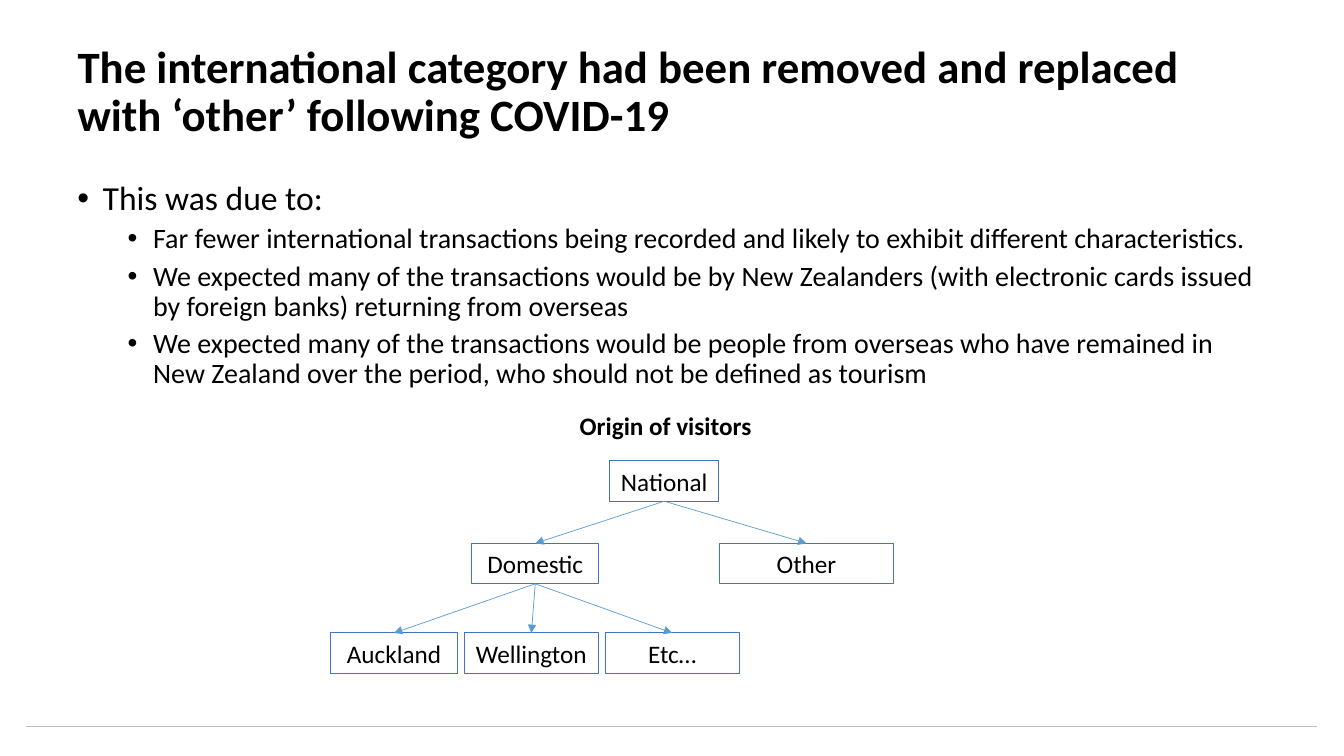
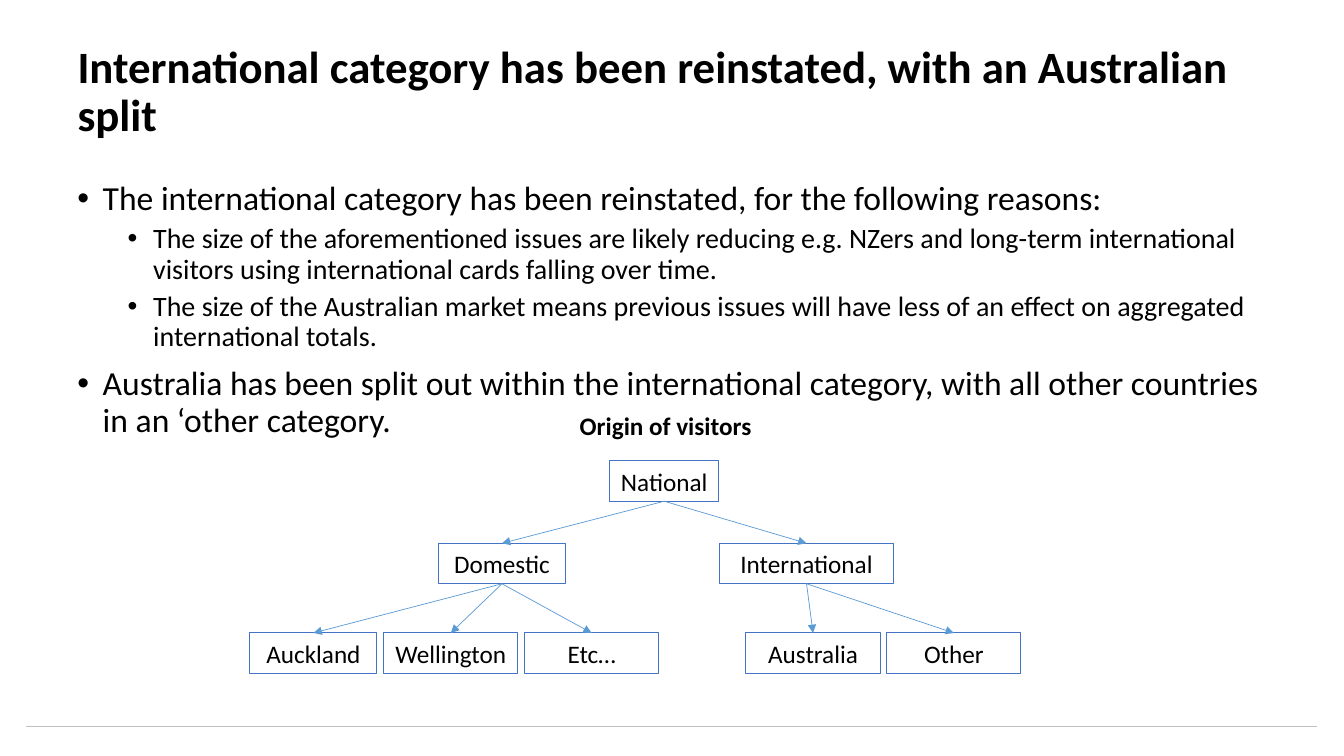
from dataclasses import dataclass

from lxml.etree import SubElement
from pptx import Presentation
from pptx.dml.color import RGBColor
from pptx.enum.shapes import MSO_CONNECTOR, MSO_SHAPE
from pptx.enum.text import MSO_ANCHOR, MSO_AUTO_SIZE, PP_ALIGN
from pptx.oxml.ns import qn
from pptx.util import Cm, Pt

BLACK = RGBColor(0x00, 0x00, 0x00)
GREY = RGBColor(0xBF, 0xBF, 0xBF)
BOX_BLUE = RGBColor(0x44, 0x72, 0xC4)
ARROW_BLUE = RGBColor(0x5B, 0x9B, 0xD5)
FONT = "Calibri"

# Lengths in centimetres
MARGIN, CONTENT_WIDTH = 1.7, 30.48
ROW_TOPS = (11.61, 13.69, 15.95)
BOX_HEIGHT = 1.02
SIBLING_GAP = 0.17
CITIES = (("Auckland", 3.2), ("Wellington", 3.38), ("Etc…", 3.38))
COUNTRIES = (("Australia", 3.38), ("Other", 3.38))


@dataclass(frozen=True)
class Node:
    label: str
    left: float
    width: float
    children: tuple["Node", ...] = ()


@dataclass(frozen=True)
class Bullet:
    text: str
    level: int = 0


@dataclass(frozen=True)
class BulletStyle:
    size: int
    indent: float
    space_before: int


@dataclass(frozen=True)
class Page:
    title: str
    bullets: tuple[Bullet, ...]
    tree: Node


BULLET_STYLES = (BulletStyle(24, 0.64, 10), BulletStyle(20, 1.91, 5))
HANGING = 0.64


def siblings(left: float, items: tuple[tuple[str, float], ...]) -> tuple[Node, ...]:
    """Lay out boxes side by side with equal gaps."""
    nodes = []
    for label, width in items:
        nodes.append(Node(label, left, width))
        left += width + SIBLING_GAP
    return tuple(nodes)


def visitor_tree(domestic_left: float, cities_left: float, abroad: str,
                 countries: tuple[Node, ...] = ()) -> Node:
    return Node("National", 15.37, 2.74, (
        Node("Domestic", domestic_left, 3.2, siblings(cities_left, CITIES)),
        Node(abroad, 18.14, 4.37, countries),
    ))


PAGES = (
    Page(
        "The international category had been removed and replaced with ‘other’ "
        "following COVID-19",
        (
            Bullet("This was due to:"),
            Bullet("Far fewer international transactions being recorded and likely to "
                   "exhibit different characteristics.", 1),
            Bullet("We expected many of the transactions would be by New Zealanders (with "
                   "electronic cards issued by foreign banks) returning from overseas", 1),
            Bullet("We expected many of the transactions would be people from overseas who "
                   "have remained in New Zealand over the period, who should not be "
                   "defined as tourism", 1),
        ),
        visitor_tree(11.89, 8.33, "Other"),
    ),
    Page(
        "International category has been reinstated, with an Australian split",
        (
            Bullet("The international category has been reinstated, for the following "
                   "reasons:"),
            Bullet("The size of the aforementioned issues are likely reducing e.g. NZers "
                   "and long-term international visitors using international cards "
                   "falling over time.", 1),
            Bullet("The size of the Australian market means previous issues will have less "
                   "of an effect on aggregated international totals.", 1),
            Bullet("Australia has been split out within the international category, with "
                   "all other countries in an ‘other category."),
        ),
        visitor_tree(11.05, 6.3, "International", siblings(18.8, COUNTRIES)),
    ),
)


def format_text(p, size: int, bold: bool = False, align=PP_ALIGN.LEFT) -> None:
    p.alignment = align
    for r in p.runs:
        r.font.name = FONT
        r.font.size = Pt(size)
        r.font.bold = bold
        r.font.color.rgb = BLACK


def add_line(s, x1: float, y1: float, x2: float, y2: float, color: RGBColor,
             width: float):
    line = s.shapes.add_connector(MSO_CONNECTOR.STRAIGHT, Cm(x1), Cm(y1), Cm(x2), Cm(y2))
    line.line.color.rgb = color
    line.line.width = Pt(width)
    SubElement(line.element.spPr, qn("a:effectLst"))
    return line


def add_arrow(s, parent, child) -> None:
    """Join the bottom of one box to the top of another."""
    arrow = add_line(s, 0, 0, 0, 0, ARROW_BLUE, 0.5)
    arrow.begin_connect(parent, 2)
    arrow.end_connect(child, 0)
    SubElement(arrow.line._get_or_add_ln(), qn("a:tailEnd"), type="triangle")


def add_title(s, text: str) -> None:
    sp = s.shapes.title
    sp.left, sp.top = Cm(MARGIN), Cm(0.76)
    sp.width, sp.height = Cm(CONTENT_WIDTH), Cm(3.18)
    tf = sp.text_frame
    tf.text = text
    tf.word_wrap = True
    tf.auto_size = MSO_AUTO_SIZE.NONE
    tf.vertical_anchor = MSO_ANCHOR.MIDDLE
    p = tf.paragraphs[0]
    p.line_spacing = 0.9
    format_text(p, 32, bold=True)


def add_bullets(s, bullets: tuple[Bullet, ...]) -> None:
    sp = s.shapes.add_textbox(Cm(MARGIN), Cm(4.45), Cm(CONTENT_WIDTH), Cm(12.57))
    tf = sp.text_frame
    tf.word_wrap = True
    for i, bullet in enumerate(bullets):
        style = BULLET_STYLES[bullet.level]
        p = tf.add_paragraph() if i else tf.paragraphs[0]
        p.text = bullet.text
        p.level = bullet.level
        pPr = p._p.get_or_add_pPr()
        pPr.set("marL", str(Cm(style.indent)))
        pPr.set("indent", str(-Cm(HANGING)))
        SubElement(pPr, qn("a:buFont"), typeface="Arial")
        SubElement(pPr, qn("a:buChar"), char="•")
        p.line_spacing = 0.9
        p.space_before = Pt(style.space_before if i else 0)
        format_text(p, style.size)


def add_tree(s, node: Node, row: int = 0):
    """Draw a box and, below it, its children with arrows to them."""
    sp = s.shapes.add_shape(MSO_SHAPE.RECTANGLE, Cm(node.left), Cm(ROW_TOPS[row]),
                            Cm(node.width), Cm(BOX_HEIGHT))
    sp.shadow.inherit = False
    sp.fill.background()
    sp.line.color.rgb = BOX_BLUE
    sp.line.width = Pt(0.75)
    tf = sp.text_frame
    tf.text = node.label
    tf.word_wrap = False
    tf.vertical_anchor = MSO_ANCHOR.MIDDLE
    format_text(tf.paragraphs[0], 18, align=PP_ALIGN.CENTER)
    for child in node.children:
        add_arrow(s, sp, add_tree(s, child, row + 1))
    return sp


def add_tree_heading(s) -> None:
    sp = s.shapes.add_textbox(Cm(11.76), Cm(10.21), Cm(10.03), Cm(BOX_HEIGHT))
    tf = sp.text_frame
    tf.word_wrap = True
    tf.text = "Origin of visitors"
    format_text(tf.paragraphs[0], 18, bold=True, align=PP_ALIGN.CENTER)


def add_page(prs, page: Page) -> None:
    s = prs.slides.add_slide(prs.slide_layouts.get_by_name("Title Only"))
    # Footer rule
    add_line(s, 0.66, 18.31, 33.2, 18.31, GREY, 1)
    # Title and reasons
    add_title(s, page.title)
    add_bullets(s, page.bullets)
    # Visitor origin tree
    add_tree_heading(s)
    add_tree(s, page.tree)


def main() -> None:
    prs = Presentation()
    prs.slide_width, prs.slide_height = Cm(33.87), Cm(19.05)
    for page in PAGES:
        add_page(prs, page)
    prs.save("out.pptx")


if __name__ == "__main__":
    main()
